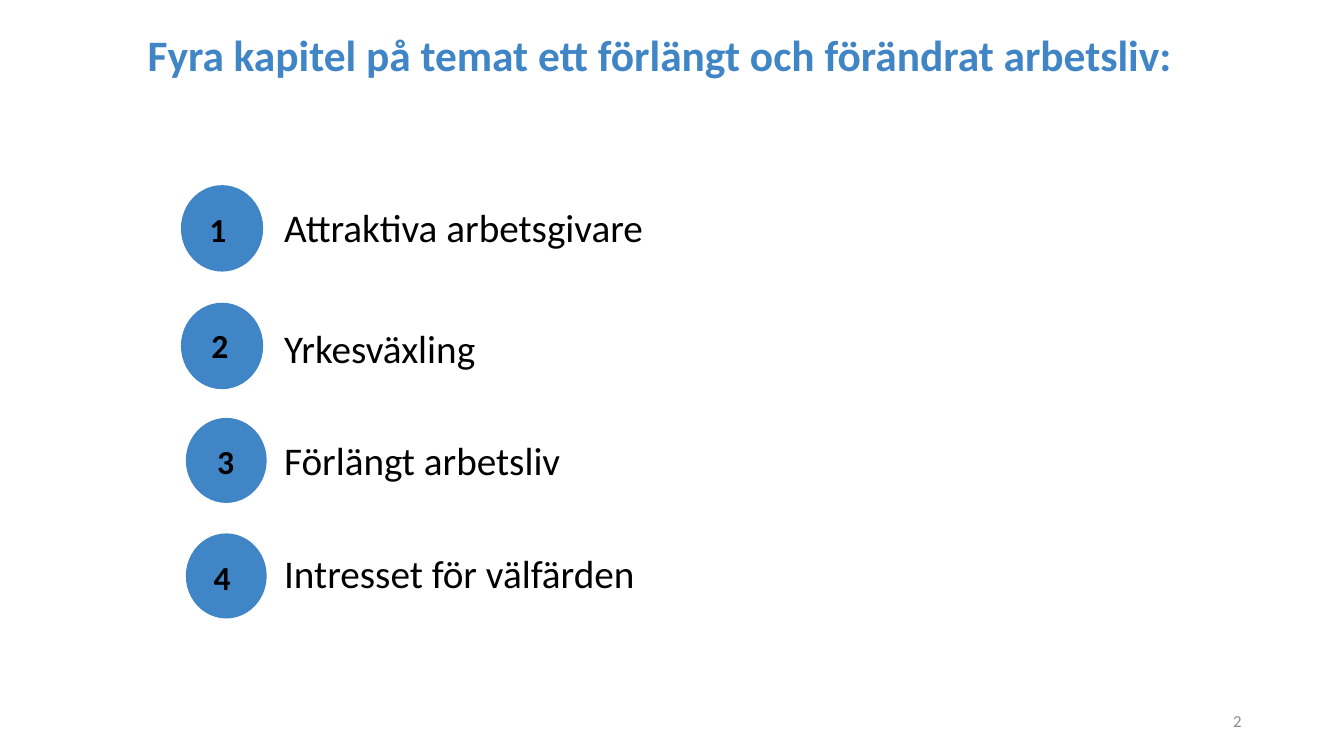
from pptx import Presentation
from pptx.dml.color import RGBColor
from pptx.enum.shapes import MSO_SHAPE as Shape
from pptx.enum.text import MSO_ANCHOR as Anchor, MSO_AUTO_SIZE as AutoSize, PP_ALIGN as Align
from pptx.util import Emu, Pt

PX = 9525
BLUE = RGBColor(0x40, 0x85, 0xC6)
BLACK = RGBColor(0, 0, 0)
GREY = RGBColor(0x8C, 0x8C, 0x8C)
TITLE = "Fyra kapitel på temat ett förlängt och förändrat arbetsliv:"
CHAPTERS = [
    ("Attraktiva arbetsgivare", 0),
    ("Yrkesväxling", 56),
    ("Förlängt arbetsliv", 50),
    ("Intresset för välfärden", 50),
]
BADGES = [
    ("1", (173, 177), True, (190, 194, 61, 48), Align.LEFT),
    ("2", (173, 289), True, (192, 305, 39, 48), Align.LEFT),
    ("3", (177, 398), False, (180, 415, 70, 48), Align.CENTER),
    ("4", (177, 508), False, (194, 526, 84, 48), Align.LEFT),
]


def px(*lengths):
    """Turn pixel lengths into EMU."""
    return [Emu(length * PX) for length in lengths]


def style(paragraph, size, color, bold=False, align=Align.LEFT):
    """Format a paragraph and its runs."""
    paragraph.alignment = align
    for run in paragraph.runs:
        run.font.name = "Calibri"
        run.font.size = Pt(size)
        run.font.bold = bold
        run.font.color.rgb = color


def place(placeholder, box):
    """Move a placeholder and let its text start at the top."""
    placeholder.left, placeholder.top, placeholder.width, placeholder.height = px(*box)
    frame = placeholder.text_frame
    frame.auto_size = AutoSize.NONE
    frame.vertical_anchor = Anchor.TOP
    return frame


def add_label(slide, text, box, size, color, bold=False, align=Align.LEFT, anchor=Anchor.TOP):
    """Add a one-line text box."""
    frame = slide.shapes.add_textbox(*px(*box)).text_frame
    frame.word_wrap = True
    frame.vertical_anchor = anchor
    frame.text = text
    style(frame.paragraphs[0], size, color, bold, align)


def add_badge(slide, number, corner, outlined, number_box, align):
    """Add a blue disc with its chapter number."""
    disc = slide.shapes.add_shape(Shape.OVAL, *px(*corner, 77, 81))
    disc.shadow.inherit = False
    disc.fill.solid()
    disc.fill.fore_color.rgb = BLUE
    if outlined:
        disc.line.color.rgb = BLUE
        disc.line.width = Pt(1)
    else:
        disc.line.fill.background()
    add_label(slide, number, number_box, 24, BLACK, True, align)


def fill_chapters(frame):
    """Write the chapter names as an indented list without bullets."""
    frame.text = "\n".join(name for name, _ in CHAPTERS)
    for paragraph, (_, gap) in zip(frame.paragraphs, CHAPTERS):
        paragraph.line_spacing = 0.9
        paragraph.space_before = Pt(gap)
        style(paragraph, 28, BLACK)
        properties = paragraph._p.get_or_add_pPr()
        properties.set("marL", str(96 * PX))
        properties.set("indent", "0")
        bullet = properties.makeelement(
            "{http://schemas.openxmlformats.org/drawingml/2006/main}buNone", {})
        properties.append(bullet)


def main():
    """Build and save the slide."""
    deck = Presentation()
    deck.slide_width, deck.slide_height = px(1280, 720)
    slide = deck.slides.add_slide(deck.slide_layouts[1])
    heading = place(slide.shapes.title, (131, 22, 1114, 60))
    heading.text = TITLE
    style(heading.paragraphs[0], 31, BLUE, True)
    fill_chapters(place(slide.placeholders[1], (165, 194, 914, 454)))
    for badge in BADGES:
        add_badge(slide, *badge)
    add_label(slide, "2", (904, 667, 288, 38), 12, GREY, align=Align.RIGHT, anchor=Anchor.MIDDLE)
    deck.save("out.pptx")


if __name__ == "__main__":
    main()
